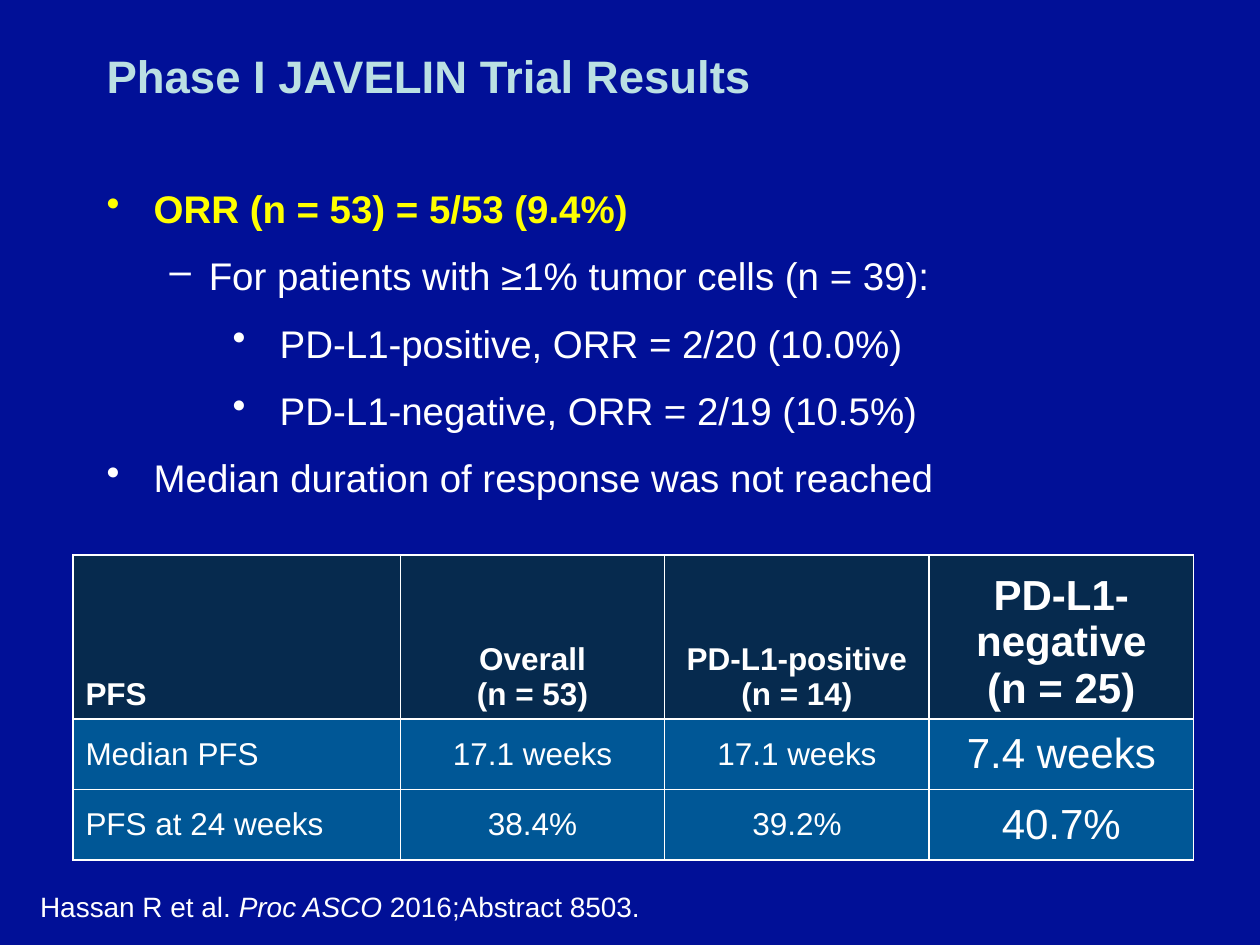
from dataclasses import dataclass

import pptx
import pptx.dml.color
import pptx.enum.text
import pptx.oxml
import pptx.oxml.ns
import pptx.util
from pptx.util import Cm

Anchor = pptx.enum.text.MSO_ANCHOR
Align = pptx.enum.text.PP_ALIGN


@dataclass(frozen=True)
class Theme:
    font: str = "Arial"
    background: str = "011097"
    title: str = "BBE0E3"
    highlight: str = "FFFF00"
    text: str = "FFFFFF"
    header_fill: str = "062A4E"
    row_fill: str = "005796"
    title_size: int = 26
    body_size: int = 22
    table_size: int = 18
    large_table_size: int = 24
    citation_size: int = 16


@dataclass(frozen=True)
class Bullet:
    text: str
    level: int = 0
    mark: str = "•"
    indent: float = 0.95
    hanging: float = 0.95
    highlighted: bool = False


THEME = Theme()

BULLETS = [
    Bullet("ORR\u00a0(n = 53) = 5/53 (9.4%)", highlighted=True),
    Bullet("For patients with ≥1% tumor cells (n = 39):", 1, "–", 2.06, 0.79),
    Bullet("PD-L1-positive, ORR = 2/20 (10.0%)", 2, indent=3.49),
    Bullet("PD-L1-negative, ORR = 2/19 (10.5%)", 2, indent=3.49),
    Bullet("Median duration of response was not reached"),
]

PFS_ROWS = [
    ["PFS", "Overall\n(n = 53)", "PD-L1-positive\n(n = 14)", "PD-L1-negative\n(n = 25)"],
    ["Median PFS", "17.1 weeks", "17.1 weeks", "7.4 weeks"],
    ["PFS at 24 weeks", "38.4%", "39.2%", "40.7%"],
]
COLUMN_WIDTHS = [6.6, 5.33, 5.33, 5.33]
ROW_HEIGHTS = [1.98, 1.42, 1.42]


def rgb(color: str) -> pptx.dml.color.RGBColor:
    return pptx.dml.color.RGBColor.from_string(color)


def add_run(paragraph, text: str, size: int, color: str = THEME.text,
            bold: bool = False, italic: bool = False) -> None:
    run = paragraph.add_run()
    run.text = text
    run.font.name = THEME.font
    run.font.size = pptx.util.Pt(size)
    run.font.color.rgb = rgb(color)
    run.font.bold = bold
    run.font.italic = italic


def add_text_frame(slide, left: float, top: float, width: float, height: float,
                   anchor=Anchor.TOP):
    frame = slide.shapes.add_textbox(Cm(left), Cm(top), Cm(width), Cm(height)).text_frame
    frame.word_wrap = True
    frame.vertical_anchor = anchor
    return frame


def add_bullet(paragraph, bullet: Bullet) -> None:
    paragraph.level = bullet.level
    paragraph.space_before = paragraph.space_after = pptx.util.Pt(6)
    properties = paragraph._p.get_or_add_pPr()
    properties.set("marL", str(Cm(bullet.indent)))
    properties.set("indent", str(-Cm(bullet.hanging)))
    mark = pptx.oxml.parse_xml(
        f'<a:buChar {pptx.oxml.ns.nsdecls("a")} char="{bullet.mark}"/>')
    properties.append(mark)
    color = THEME.highlight if bullet.highlighted else THEME.text
    add_run(paragraph, bullet.text, THEME.body_size, color, bold=bullet.highlighted)


def add_borders(cell) -> None:
    properties = cell._tc.get_or_add_tcPr()
    for position, side in enumerate(("lnL", "lnR", "lnT", "lnB")):
        properties.insert(position, pptx.oxml.parse_xml(
            f'<a:{side} {pptx.oxml.ns.nsdecls("a")} w="{pptx.util.Pt(1)}"><a:solidFill>'
            f'<a:srgbClr val="{THEME.text}"/></a:solidFill></a:{side}>'))


def fill_cell(cell, text: str, is_header: bool, is_label: bool, size: int) -> None:
    cell.fill.solid()
    cell.fill.fore_color.rgb = rgb(THEME.header_fill if is_header else THEME.row_fill)
    cell.vertical_anchor = Anchor.BOTTOM if is_header else Anchor.MIDDLE
    add_borders(cell)
    frame = cell.text_frame
    for number, line in enumerate(text.split("\n")):
        paragraph = frame.add_paragraph() if number else frame.paragraphs[0]
        paragraph.alignment = Align.LEFT if is_label else Align.CENTER
        add_run(paragraph, line, size, bold=is_header)


def add_pfs_table(slide, left: float, top: float) -> None:
    table = slide.shapes.add_table(
        len(ROW_HEIGHTS), len(COLUMN_WIDTHS), Cm(left), Cm(top),
        Cm(sum(COLUMN_WIDTHS)), Cm(sum(ROW_HEIGHTS))).table
    for column, width in zip(table.columns, COLUMN_WIDTHS):
        column.width = Cm(width)
    for row, height in zip(table.rows, ROW_HEIGHTS):
        row.height = Cm(height)
    last_column = len(COLUMN_WIDTHS) - 1
    for r, texts in enumerate(PFS_ROWS):
        for c, text in enumerate(texts):
            size = THEME.large_table_size if c == last_column else THEME.table_size
            fill_cell(table.cell(r, c), text, r == 0, c == 0, size)


def main() -> None:
    presentation = pptx.Presentation()
    presentation.slide_width, presentation.slide_height = Cm(25.4), Cm(19.05)
    slide = presentation.slides.add_slide(presentation.slide_layouts[6])
    slide.background.fill.solid()
    slide.background.fill.fore_color.rgb = rgb(THEME.background)

    # Citation
    citation = add_text_frame(slide, 0.56, 17.81, 24.84, 0.94).paragraphs[0]
    add_run(citation, "Hassan R et al. ", THEME.citation_size)
    add_run(citation, "Proc ASCO ", THEME.citation_size, italic=True)
    add_run(citation, "2016;Abstract 8503.", THEME.citation_size)

    # Progression-free survival
    add_pfs_table(slide, 1.47, 11.19)

    # Title
    title = add_text_frame(slide, 1.9, 0, 21.6, 3.18, Anchor.MIDDLE).paragraphs[0]
    title.line_spacing = 0.9
    add_run(title, "Phase I JAVELIN Trial Results", THEME.title_size, THEME.title, bold=True)

    # Response rates
    body = add_text_frame(slide, 1.9, 3.61, 21.6, 7.59)
    for number, bullet in enumerate(BULLETS):
        add_bullet(body.add_paragraph() if number else body.paragraphs[0], bullet)

    presentation.save("out.pptx")


if __name__ == "__main__":
    main()
